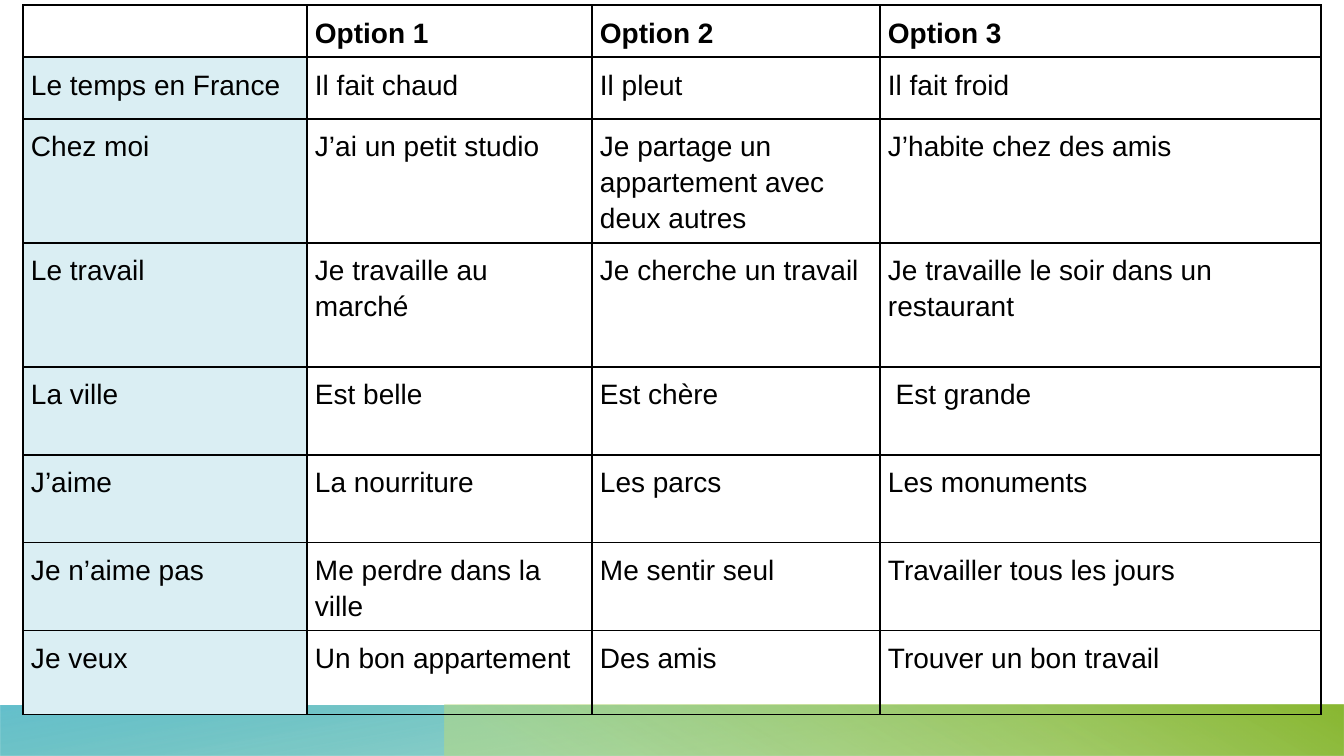
from lxml import etree
from pptx import Presentation
from pptx.dml.color import RGBColor
from pptx.enum.shapes import MSO_SHAPE
from pptx.oxml.ns import qn
from pptx.util import Pt

RECT = MSO_SHAPE.RECTANGLE
W, H = 1344, 756
SCALE = 12192000 / W
BLANK = 6
COLORS = {
    "text": "000000",
    "border": "000000",
    "label": "DAEEF3",
    "green": "029676",
    "teal": "4AB5C4",
    "lime": "BBDB7E",
    "leaf": "8AB833",
}
COLS = [284, 285, 288, 441]
ROW_HEIGHTS = [52, 62, 124, 124, 88, 88, 88, 84]
ROWS = [
    ["", "Option 1", "Option 2", "Option 3"],
    ["Le temps en France", "Il fait chaud", "Il pleut", "Il fait froid"],
    ["Chez moi", "J’ai un petit studio", "Je partage un appartement avec deux autres",
     "J’habite chez des amis"],
    ["Le travail", "Je travaille au marché", "Je cherche un travail",
     "Je travaille le soir dans un restaurant"],
    ["La ville", "Est belle", "Est chère", " Est grande"],
    ["J’aime", "La nourriture", "Les parcs", "Les monuments"],
    ["Je n’aime pas", "Me perdre dans la ville", "Me sentir seul",
     "Travailler tous les jours"],
    ["Je veux", "Un bon appartement", "Des amis", "Trouver un bon travail"],
]


def px(n):
    return round(n * SCALE)


def rgb(name):
    return RGBColor.from_string(COLORS[name])


def set_attrs(obj, values):
    for name, value in values.items():
        setattr(obj, name, value)


def add_band(s, box, stops, angle, rotation=0):
    sp = s.shapes.add_shape(RECT, *map(px, box))
    sp.shadow.inherit = False
    sp.rotation = rotation
    sp._element.spPr.find(qn("a:xfrm")).set("flipH", "1")
    sp.line.fill.background()
    sp.fill.gradient()
    sp.fill.gradient_angle = 360 - angle
    for stop, (position, color, opacity) in zip(sp.fill.gradient_stops, stops):
        stop.position = position
        stop.color.rgb = rgb(color)
        clr = stop._gs.find(qn("a:srgbClr"))
        etree.SubElement(clr, qn("a:alpha")).set("val", str(opacity * 1000))


def add_footer(s, box):
    x, y, w, h = box
    split = 445
    add_band(s, box, [(0.14, "green", 28), (1, "teal", 85)], 100, 180)
    add_band(s, (x + split, y, w - split, h),
             [(0.09, "lime", 55), (0.99, "leaf", 100)], 240)


def add_borders(cell):
    tcPr = cell._tc.get_or_add_tcPr()
    for i, side in enumerate(["lnL", "lnR", "lnT", "lnB"]):
        ln = etree.Element(qn(f"a:{side}"), w=str(Pt(1)))
        fill = etree.SubElement(ln, qn("a:solidFill"))
        etree.SubElement(fill, qn("a:srgbClr")).set("val", COLORS["border"])
        tcPr.insert(i, ln)


def format_cell(cell, text, is_header, is_label):
    margins = ["margin_left", "margin_right", "margin_top", "margin_bottom"]
    set_attrs(cell, dict.fromkeys(margins, px(8)))
    if is_label:
        cell.fill.solid()
        cell.fill.fore_color.rgb = rgb("label")
    else:
        cell.fill.background()
    add_borders(cell)
    p = cell.text_frame.paragraphs[0]
    p.line_spacing = 1.15
    if text:
        r = p.add_run()
        r.text = text
        set_attrs(r.font, {"name": "Arial", "size": Pt(20), "bold": is_header})
        r.font.color.rgb = rgb("text")


def add_options_table(s, box):
    table = s.shapes.add_table(len(ROWS), len(COLS), *map(px, box)).table
    set_attrs(table, {"first_row": False, "horz_banding": False})
    for col, width in zip(table.columns, COLS):
        col.width = px(width)
    for row, height in zip(table.rows, ROW_HEIGHTS):
        row.height = px(height)
    for i, texts in enumerate(ROWS):
        for j, text in enumerate(texts):
            format_cell(table.cell(i, j), text, i == 0, i > 0 and j == 0)


def main():
    prs = Presentation()
    set_attrs(prs, {"slide_width": px(W), "slide_height": px(H)})
    s = prs.slides.add_slide(prs.slide_layouts[BLANK])
    add_footer(s, (0, 705, W, 51))
    add_options_table(s, (23, 5, sum(COLS), sum(ROW_HEIGHTS)))
    prs.save("out.pptx")


if __name__ == "__main__":
    main()
